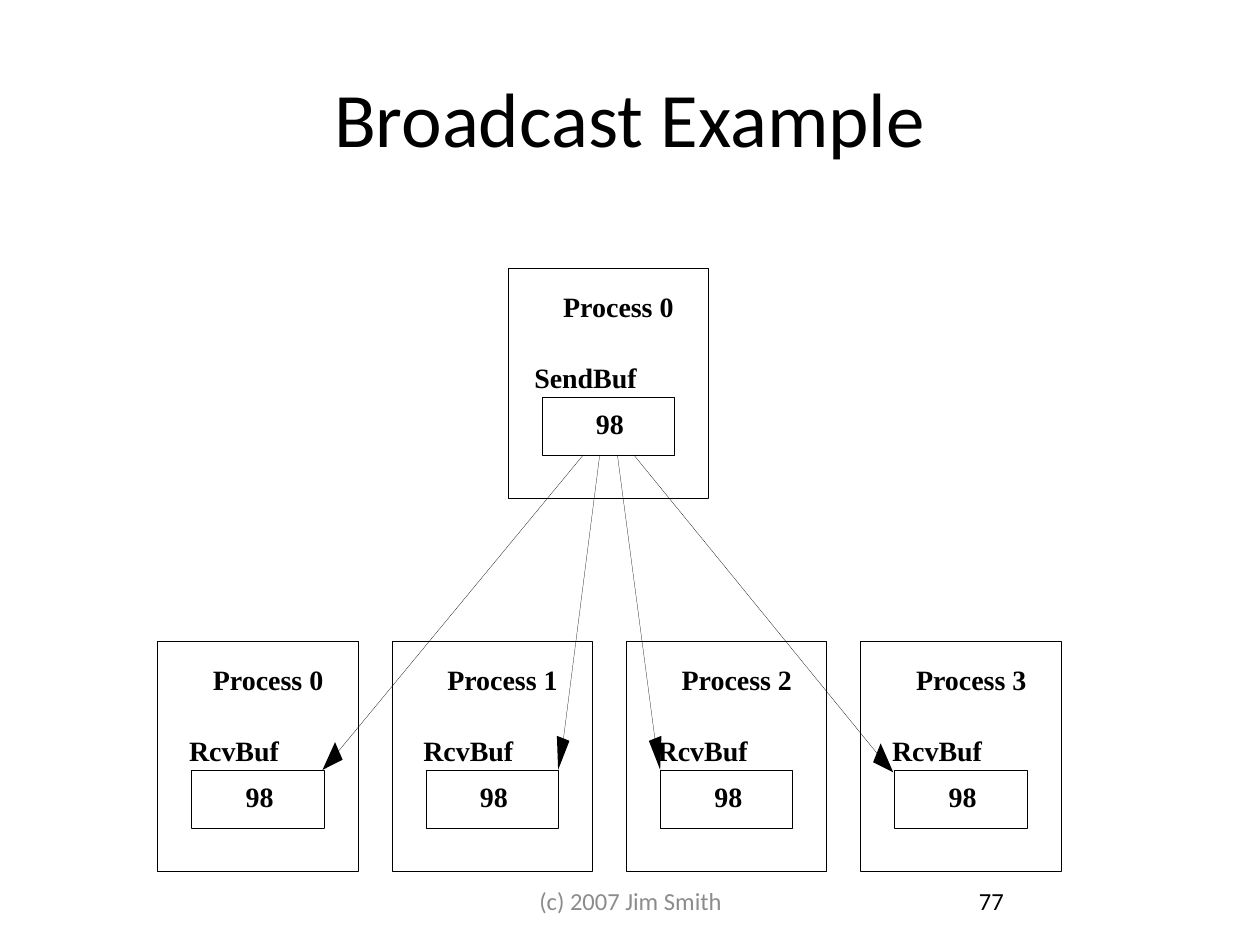
import pptx
import pptx.util
import pptx.dml.color
import pptx.enum.shapes
import pptx.enum.text
import pptx.oxml.ns
import lxml.etree

Inches = pptx.util.Inches
Pt = pptx.util.Pt
RGBColor = pptx.dml.color.RGBColor
PP_ALIGN = pptx.enum.text.PP_ALIGN
MSO_ANCHOR = pptx.enum.text.MSO_ANCHOR

BLACK = RGBColor(0x00, 0x00, 0x00)
WHITE = RGBColor(0xFF, 0xFF, 0xFF)
GRAY = RGBColor(0x8C, 0x8C, 0x8C)
HEADING_FONT = "Calibri"
DIAGRAM_FONT = "Times New Roman"
LINE_WIDTH = 0.13

TITLE = "Broadcast Example"
FOOTER = "(c) 2007 Jim Smith"
PAGE_NUMBER = "77"
VALUE = "98"
SENDER = "Process 0"
RECEIVERS = ["Process 0", "Process 1", "Process 2", "Process 3"]

SENDER_AT = (4.03, 2.13)
RECEIVERS_AT = (1.25, 5.09)
RECEIVER_PITCH = 1.86
BOX_SIZE = (1.59, 1.82)
BUFFER_SIZE = (1.05, 0.46)

ARROWS = [
    ((4.63, 3.61), (2.68, 5.97), [(2.72, 6.03), (2.56, 6.11), (2.66, 5.89)]),
    ((4.76, 3.61), (4.47, 5.88), [(4.52, 5.88), (4.43, 6.11), (4.42, 5.84)]),
    ((4.90, 3.61), (5.20, 5.88), [(5.25, 5.84), (5.24, 6.11), (5.15, 5.88)]),
    ((5.03, 3.61), (6.97, 5.99), [(6.99, 5.90), (7.09, 6.13), (6.93, 6.05)]),
]


def add_text(slide, text, left, top, width, height, size, font=HEADING_FONT,
             color=BLACK, align=PP_ALIGN.CENTER):
    box = slide.shapes.add_textbox(*map(Inches, (left, top, width, height)))
    frame = box.text_frame
    frame.word_wrap = True
    frame.vertical_anchor = MSO_ANCHOR.MIDDLE
    paragraph = frame.paragraphs[0]
    paragraph.alignment = align
    run = paragraph.add_run()
    run.text = text
    run.font.size = Pt(size)
    run.font.name = font
    run.font.color.rgb = color
    return box


def add_label(slide, text, left, top, width):
    box = add_text(slide, text, left, top, width, 0.27, 16,
                   DIAGRAM_FONT, align=PP_ALIGN.LEFT)
    frame = box.text_frame
    frame.word_wrap = False
    frame.auto_size = pptx.enum.text.MSO_AUTO_SIZE.SHAPE_TO_FIT_TEXT
    frame.vertical_anchor = MSO_ANCHOR.TOP
    frame.margin_left = frame.margin_right = 0
    frame.margin_top = frame.margin_bottom = 0
    frame.paragraphs[0].runs[0].font.bold = True


def add_rectangle(slide, left, top, size):
    shape = slide.shapes.add_shape(
        pptx.enum.shapes.MSO_SHAPE.RECTANGLE,
        *map(Inches, (left, top, *size)))
    shape.shadow.inherit = False
    shape.fill.solid()
    shape.fill.fore_color.rgb = WHITE
    shape.line.color.rgb = BLACK
    shape.line.width = Pt(LINE_WIDTH)


def add_process(slide, left, top, name, buffer_name, buffer_offset, buffer_width):
    add_rectangle(slide, left, top, BOX_SIZE)
    add_rectangle(slide, left + 0.27, top + 1.02, BUFFER_SIZE)
    add_label(slide, VALUE, left + 0.7, top + 1.1, 0.23)
    add_label(slide, name, left + 0.44, top + 0.17, 0.89)
    add_label(slide, buffer_name, left + buffer_offset, top + 0.73, buffer_width)


def add_arrow(slide, start, end, head):
    connector = slide.shapes.add_connector(
        pptx.enum.shapes.MSO_CONNECTOR.STRAIGHT, *map(Inches, start + end))
    connector.line.color.rgb = BLACK
    connector.line.width = Pt(LINE_WIDTH)
    lxml.etree.SubElement(connector._element.spPr, pptx.oxml.ns.qn("a:effectLst"))

    points = [tuple(map(Inches, point)) for point in head]
    builder = slide.shapes.build_freeform(*points[0])
    builder.add_line_segments(points[1:], close=True)
    shape = builder.convert_to_shape()
    shape.shadow.inherit = False
    shape.fill.solid()
    shape.fill.fore_color.rgb = BLACK
    shape.line.fill.background()


def main():
    presentation = pptx.Presentation()
    presentation.slide_width = Inches(10)
    presentation.slide_height = Inches(7.5)
    slide = presentation.slides.add_slide(presentation.slide_layouts[6])

    add_text(slide, TITLE, 0.5, 0.3, 9, 1.25, 44)
    add_process(slide, *SENDER_AT, SENDER, "SendBuf", 0.21, 0.82)
    left, top = RECEIVERS_AT
    for index, name in enumerate(RECEIVERS):
        add_process(slide, left + index * RECEIVER_PITCH, top, name,
                    "RcvBuf", 0.25, 0.72)
    for start, end, head in ARROWS:
        add_arrow(slide, start, end, head)

    number = add_text(slide, PAGE_NUMBER, 7.17, 6.95, 2.33, 0.4, 14,
                      align=PP_ALIGN.LEFT)
    number.text_frame.margin_left = Inches(0.6)
    add_text(slide, FOOTER, 3.42, 6.95, 3.17, 0.4, 14, color=GRAY)
    presentation.save("out.pptx")


if __name__ == "__main__":
    main()
